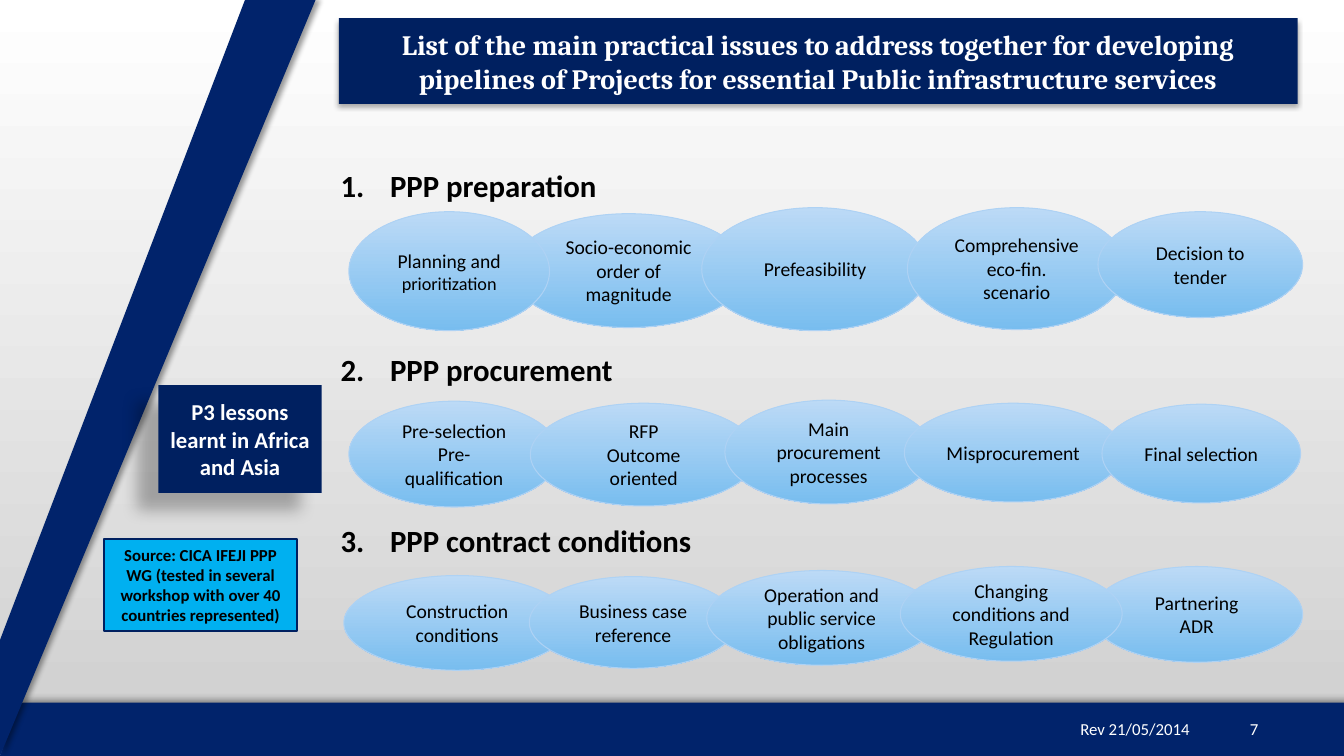
from lxml import etree
from pptx import Presentation
from pptx.dml.color import RGBColor
from pptx.enum.shapes import MSO_SHAPE
from pptx.enum.text import MSO_ANCHOR, MSO_AUTO_SIZE, PP_ALIGN
from pptx.oxml.ns import qn
from pptx.util import Pt

PX = 9144  # 100 px to the inch
SLIDE_WIDTH, SLIDE_HEIGHT = 1333, 750
TITLE_ONLY = 5

OVAL, RECTANGLE = MSO_SHAPE.OVAL, MSO_SHAPE.RECTANGLE
TOP, MIDDLE = MSO_ANCHOR.TOP, MSO_ANCHOR.MIDDLE
LEFT, CENTER, RIGHT = PP_ALIGN.LEFT, PP_ALIGN.CENTER, PP_ALIGN.RIGHT

BLACK = RGBColor(0x00, 0x00, 0x00)
WHITE = RGBColor(0xFF, 0xFF, 0xFF)
GREY = RGBColor(0xCE, 0xCE, 0xCE)
BAND_BLUE = RGBColor(0x01, 0x23, 0x6B)
NAVY = RGBColor(0x00, 0x20, 0x60)
CYAN = RGBColor(0x00, 0xB0, 0xF0)
OVAL_TOP = RGBColor(0xBC, 0xDA, 0xF6)
OVAL_BOTTOM = RGBColor(0x78, 0xBD, 0xEF)
OVAL_LINE = RGBColor(0xAE, 0xD2, 0xF4)

# Bands: corner points and shadow direction
BANDS = [
    ([(19, 697), (1333, 697), (1333, 750), (0, 750)], 315),
    ([(313, 0), (243, 0), (0, 635), (0, 750)], 0),
]

# Headings: text and space before in points
HEADINGS = [
    ("1.\tPPP preparation", 0),
    ("2.\tPPP procurement", 104.5),
    ("3.\tPPP contract conditions", 96),
]

# Issues from back to front: box and lines of text
ISSUES = [
    ((506, 212, 235, 113), ["Socio-economic order of magnitude"]),
    ((346, 210, 199, 118), [[("Planning and ", 14), ("prioritization", 13)]]),
    ((696, 206, 225, 122), ["Prefeasibility"]),
    ((900, 206, 217, 121), ["Comprehensive eco-fin.", "scenario"]),
    ((1089, 210, 203, 105), ["Decision to tender"]),
    ((346, 398, 209, 105), ["Pre-selection", "Pre-qualification"]),
    ((526, 400, 225, 102), ["RFP", "Outcome oriented"]),
    ((719, 397, 206, 103), ["Main procurement processes"]),
    ((897, 400, 216, 98), ["Misprocurement"]),
    ((1093, 401, 197, 98), ["Final selection"]),
    ((341, 571, 225, 94), ["Construction conditions"]),
    ((525, 572, 206, 91), ["Business case reference"]),
    ((701, 566, 228, 94), ["Operation and public service obligations"]),
    ((1082, 562, 210, 95), ["Partnering", "ADR"]),
    ((893, 562, 220, 94), ["Changing conditions and Regulation"]),
]


def to_emu(box):
    return [length * PX for length in box]


def set_gradient(fill, first, last):
    fill.gradient()
    fill.gradient_angle = 270
    for stop, color in zip(fill.gradient_stops, (first, last)):
        stop.color.rgb = color


def set_shadow(shape, opacity, blur, distance, direction):
    shape.shadow.inherit = False
    effects = shape._element.spPr.find(qn("a:effectLst"))
    shadow = etree.SubElement(
        effects, qn("a:outerShdw"), blurRad=str(Pt(blur)), dist=str(Pt(distance)),
        dir=str(direction * 60000), algn="ctr", rotWithShape="0")
    color = etree.SubElement(shadow, qn("a:srgbClr"), val=str(BLACK))
    etree.SubElement(color, qn("a:alpha"), val=str(opacity * 1000))


def write_text(shape, lines, size=14, font="Calibri", color=BLACK, bold=False,
               align=CENTER, anchor=MIDDLE):
    """Each line is a string, or a list of (text, size) runs."""
    frame = shape.text_frame
    frame.word_wrap = True
    frame.auto_size = MSO_AUTO_SIZE.NONE
    frame.vertical_anchor = anchor
    for index, line in enumerate(lines):
        paragraph = frame.add_paragraph() if index else frame.paragraphs[0]
        paragraph.alignment = align
        runs = [(line, size)] if isinstance(line, str) else line
        for text, run_size in runs:
            run = paragraph.add_run()
            run.text = text
            run.font.size = Pt(run_size)
            run.font.name = font
            run.font.bold = bold
            run.font.color.rgb = color
    return frame


def set_solid(shape, color, line=None, line_width=0.75):
    shape.fill.solid()
    shape.fill.fore_color.rgb = color
    if line is None:
        shape.line.fill.background()
    else:
        shape.line.color.rgb = line
        shape.line.width = Pt(line_width)


def add_shape(slide, kind, box):
    shape = slide.shapes.add_shape(kind, *to_emu(box))
    shape.shadow.inherit = False
    return shape


def add_band(slide, points, direction):
    builder = slide.shapes.build_freeform(*points[0], scale=PX)
    builder.add_line_segments(points[1:], close=True)
    band = builder.convert_to_shape()
    set_solid(band, BAND_BLUE)
    set_shadow(band, 40, 4, 3, direction)


def add_headings(slide):
    box = slide.shapes.add_textbox(*to_emu((328, 161, 1005, 484)))
    frame = write_text(box, [text for text, _ in HEADINGS], size=22, bold=True,
                       align=LEFT, anchor=TOP)
    for paragraph, (_, space) in zip(frame.paragraphs, HEADINGS):
        paragraph.space_before = Pt(space)
        properties = paragraph._p.get_or_add_pPr()
        properties.set("marL", str(49 * PX))
        properties.set("indent", str(-49 * PX))


def add_issue(slide, box, lines):
    oval = add_shape(slide, OVAL, box)
    set_gradient(oval.fill, OVAL_TOP, OVAL_BOTTOM)
    oval.line.color.rgb = OVAL_LINE
    oval.line.width = Pt(0.75)
    write_text(oval, lines)


def add_footer(slide, box, text):
    footer = slide.shapes.add_textbox(*to_emu(box))
    write_text(footer, [text], size=12, color=WHITE, align=RIGHT)


def place_title(slide):
    title = slide.shapes.title
    title.left, title.top, title.width, title.height = to_emu((157, 382, 162, 107))
    set_solid(title, NAVY)
    set_shadow(title, 28, 11.8, 19.7, 141)
    write_text(title, ["P3 lessons learnt in Africa and Asia"], size=16.2,
               color=WHITE, bold=True)
    # Bring the title in front of the slanted band
    title._element.getparent().append(title._element)


def main():
    presentation = Presentation()
    presentation.slide_width = SLIDE_WIDTH * PX
    presentation.slide_height = SLIDE_HEIGHT * PX
    slide = presentation.slides.add_slide(presentation.slide_layouts[TITLE_ONLY])

    # Background and bands
    set_gradient(slide.background.fill, WHITE, GREY)
    for points, direction in BANDS:
        add_band(slide, points, direction)

    # Three groups of issues
    add_headings(slide)
    for box, lines in ISSUES:
        add_issue(slide, box, lines)

    # Banner
    banner = add_shape(slide, RECTANGLE, (336, 18, 951, 85))
    set_solid(banner, NAVY)
    set_shadow(banner, 32, 3.5, 2.2, 90)
    write_text(banner, ["List of the main practical issues to address together for "
                        "developing pipelines of Projects for essential Public "
                        "infrastructure services"],
               size=20, font="Cambria", color=WHITE, bold=True)

    # Source note and title
    note = add_shape(slide, RECTANGLE, (103, 535, 192, 91))
    set_solid(note, CYAN, line=NAVY, line_width=1.5)
    write_text(note, ["Source: CICA IFEJI PPP WG (tested in several workshop with "
                      "over 40 countries represented)"],
               size=12, bold=True, anchor=TOP)
    place_title(slide)

    # Footer
    add_footer(slide, (1026, 703, 164, 40), "Rev 21/05/2014")
    add_footer(slide, (1198, 703, 60, 40), "7")

    presentation.save("out.pptx")


if __name__ == "__main__":
    main()
